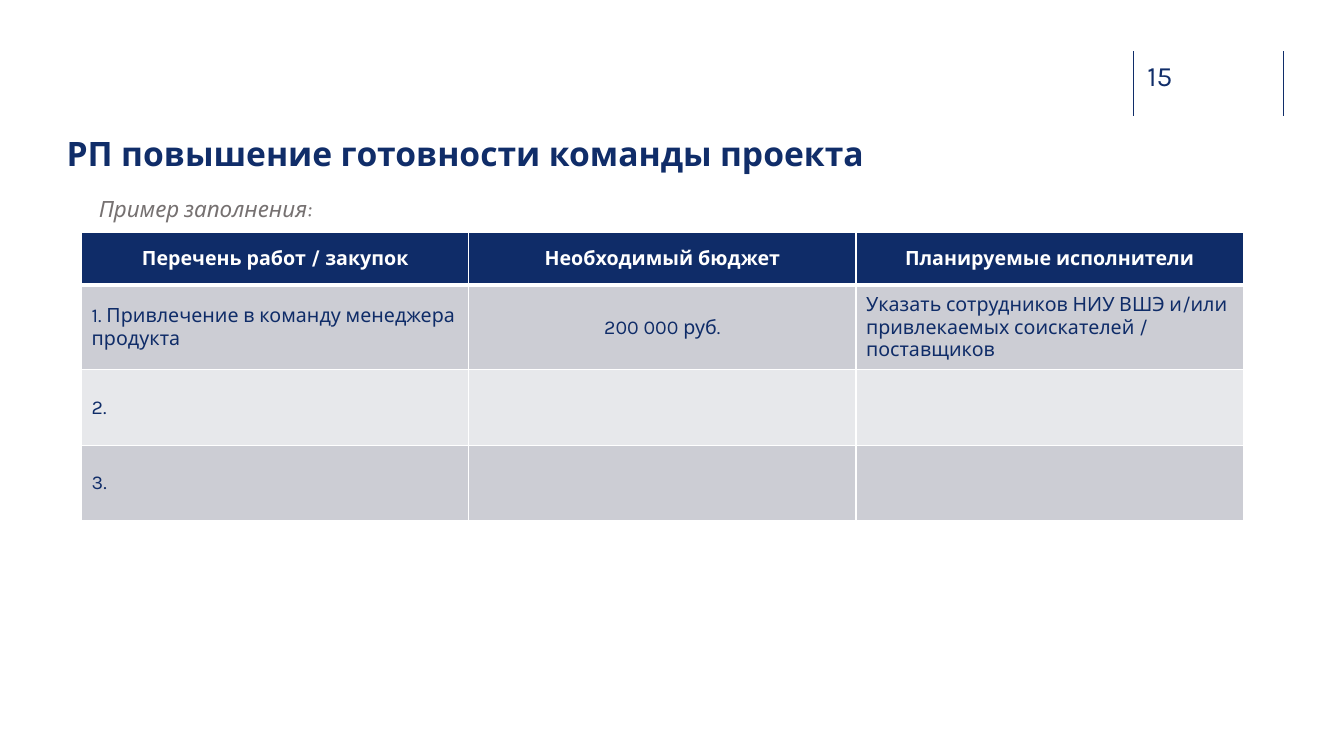
from lxml import etree
from pptx import Presentation
from pptx.dml.color import RGBColor
from pptx.enum.shapes import MSO_CONNECTOR
from pptx.enum.text import MSO_ANCHOR, MSO_AUTO_SIZE, PP_ALIGN
from pptx.oxml.ns import qn
from pptx.util import Inches, Pt

FONT = "Karla"
NAVY, HEADER_NAVY, WHITE, GREY = "102D69", "0F2C68", "FFFFFF", "767171"
BANDS = ["CCCDD4", "E7E8EB"]
ROW_HEIGHTS = [0.52, 0.84, 0.75, 0.75]
COLUMN_WIDTH = 3.84
WORKS = [
    ["Перечень работ / закупок", "Необходимый бюджет", "Планируемые исполнители"],
    ["1. Привлечение в команду менеджера продукта", "200 000 руб.",
     "Указать сотрудников НИУ ВШЭ и/или привлекаемых соискателей / поставщиков"],
    ["2.", "", ""],
    ["3.", "", ""],
]


def rgb(value):
    """Turn a hex string into a colour."""
    return RGBColor.from_string(value)


def write(frame, text, size, color, align=PP_ALIGN.LEFT, bold=False, italic=False):
    """Put one formatted paragraph into a text frame."""
    frame.text = text
    paragraph = frame.paragraphs[0]
    paragraph.alignment = align
    font = paragraph.font
    font.name, font.size, font.bold, font.italic = FONT, Pt(size), bold, italic
    font.color.rgb = rgb(color)


def set_up_frame(frame, anchor, inset_x, inset_y):
    """Set wrapping, anchoring and insets of a text frame."""
    frame.word_wrap = True
    frame.auto_size = MSO_AUTO_SIZE.NONE
    frame.vertical_anchor = anchor
    frame.margin_left = frame.margin_right = Inches(inset_x)
    frame.margin_top = frame.margin_bottom = Inches(inset_y)


def add_title(slide, text):
    """Move and fill the title placeholder."""
    title = slide.shapes.title
    title.left, title.top = Inches(0.56), Inches(1.27)
    title.width, title.height = Inches(11.08), Inches(0.5)
    set_up_frame(title.text_frame, MSO_ANCHOR.TOP, 0.1, 0.05)
    write(title.text_frame, text, 24, NAVY, bold=True)


def add_label(slide, text, box, size, color, anchor, inset, italic=False):
    """Add a text box with one paragraph."""
    label = slide.shapes.add_textbox(*map(Inches, box))
    set_up_frame(label.text_frame, anchor, inset, inset)
    write(label.text_frame, text, size, color, italic=italic)


def add_rule(slide, x):
    """Add a vertical rule beside the page number."""
    rule = slide.shapes.add_connector(
        MSO_CONNECTOR.STRAIGHT, Inches(x), Inches(0.51), Inches(x), Inches(1.15))
    rule.line.color.rgb = rgb(NAVY)
    rule.line.width = Pt(1)
    etree.SubElement(rule._element.spPr, qn("a:effectLst"))


def set_borders(cell, widths):
    """Draw white cell borders with widths for left, right, top and bottom."""
    properties = cell._tc.get_or_add_tcPr()
    for position, (side, width) in enumerate(zip("LRTB", widths)):
        border = etree.Element(qn(f"a:ln{side}"), w=str(Pt(width)))
        fill = etree.SubElement(border, qn("a:solidFill"))
        etree.SubElement(fill, qn("a:srgbClr"), val=WHITE)
        properties.insert(position, border)


def fill_cell(cell, text, row, column):
    """Format one table cell by its row and column."""
    header = row == 0
    centred = header or column == 1
    cell.vertical_anchor = MSO_ANCHOR.MIDDLE
    cell.fill.solid()
    cell.fill.fore_color.rgb = rgb(HEADER_NAVY if header else BANDS[(row - 1) % 2])
    write(cell.text_frame, text, 14, WHITE if header else HEADER_NAVY,
          PP_ALIGN.CENTER if centred else PP_ALIGN.LEFT, bold=header)
    set_borders(cell, [1, 1, 3 if row == 1 else 1, 3 if header else 1])


def add_works_table(slide):
    """Add the table of works, budgets and performers."""
    columns = len(WORKS[0])
    table = slide.shapes.add_table(
        len(WORKS), columns, Inches(0.81), Inches(2.31),
        Inches(COLUMN_WIDTH * columns), Inches(sum(ROW_HEIGHTS))).table
    for column in table.columns:
        column.width = Inches(COLUMN_WIDTH)
    for row, (height, texts) in enumerate(zip(ROW_HEIGHTS, WORKS)):
        table.rows[row].height = Inches(height)
        for column, text in enumerate(texts):
            fill_cell(table.cell(row, column), text, row, column)


def main():
    """Build the slide and save it."""
    deck = Presentation()
    deck.slide_width, deck.slide_height = Inches(13.33), Inches(7.5)
    slide = deck.slides.add_slide(deck.slide_layouts[5])
    for x in (11.24, 12.73):
        add_rule(slide, x)
    add_label(slide, "15", (11.38, 0.58, 0.73, 0.34), 20, NAVY, MSO_ANCHOR.TOP, 0)
    add_title(slide, "РП повышение готовности команды проекта")
    add_works_table(slide)
    add_label(slide, "Пример заполнения:", (0.9, 1.85, 11.51, 0.43), 16, GREY,
              MSO_ANCHOR.MIDDLE, 0.08, italic=True)
    deck.save("out.pptx")


if __name__ == "__main__":
    main()
